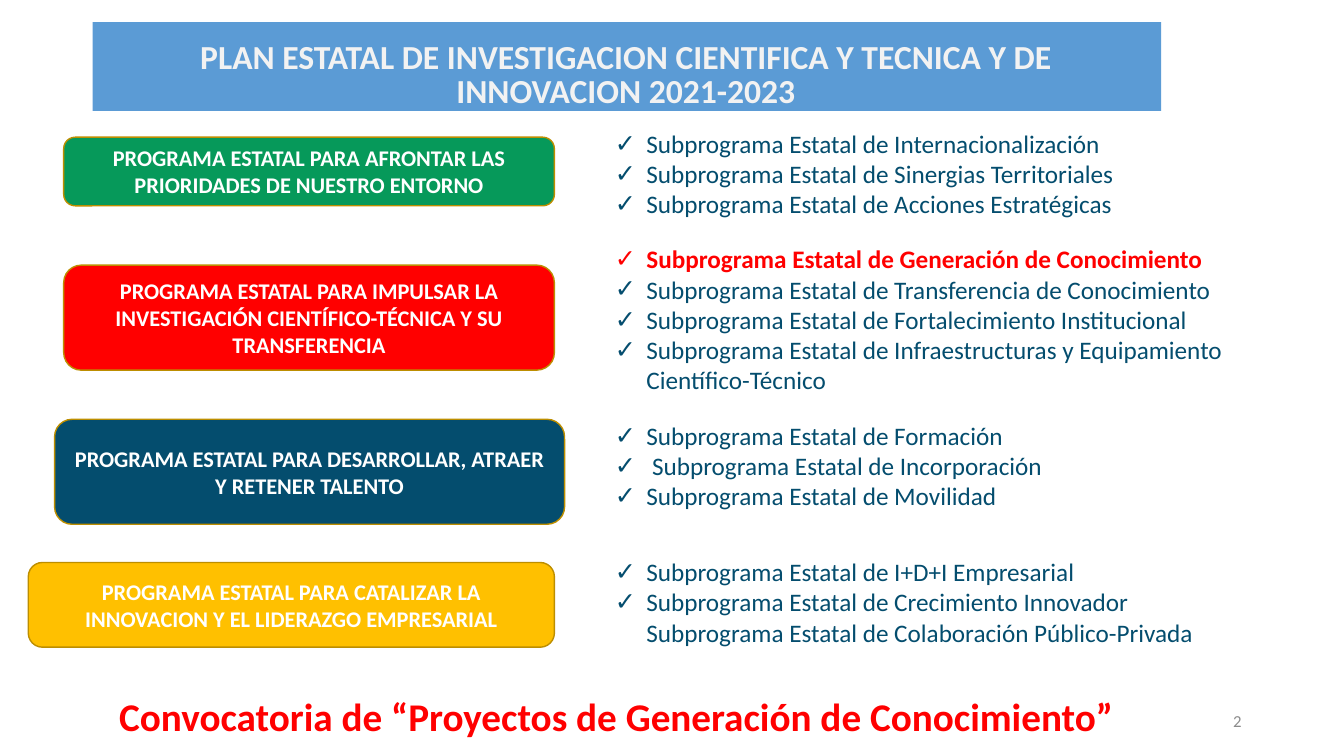
from lxml.etree import SubElement
from pptx import Presentation
from pptx.dml.color import RGBColor
from pptx.enum.shapes import MSO_SHAPE
from pptx.enum.text import MSO_ANCHOR, MSO_AUTO_SIZE, PP_ALIGN
from pptx.oxml.ns import qn
from pptx.util import Pt

WHITE = RGBColor(0xFF, 0xFF, 0xFF)
PALE = RGBColor(0xF2, 0xF2, 0xF2)
GRAY = RGBColor(0x8C, 0x8C, 0x8C)
SKY = RGBColor(0x5B, 0x9B, 0xD5)
GREEN = RGBColor(0x06, 0x99, 0x5A)
RED = RGBColor(0xFF, 0x00, 0x00)
NAVY = RGBColor(0x04, 0x4D, 0x6E)
AMBER = RGBColor(0xFF, 0xC0, 0x00)
GOLD = RGBColor(0xBD, 0x8E, 0x00)

COMPARISON_LAYOUT = 4
LIST_LEFT = 432

# Card text, fill and bounds; list top, width, height and items
PROGRAMMES = [
    ("PROGRAMA ESTATAL PARA AFRONTAR LAS PRIORIDADES DE NUESTRO ENTORNO",
     GREEN, (45.5, 98, 350.5, 49), (88, 480, 72.7),
     ["Subprograma Estatal de Internacionalización",
      "Subprograma Estatal de Sinergias Territoriales",
      "Subprograma Estatal de Acciones Estratégicas"]),
    ("PROGRAMA ESTATAL PARA IMPULSAR LA INVESTIGACIÓN CIENTÍFICO-TÉCNICA "
     "Y SU TRANSFERENCIA",
     RED, (45.5, 189.4, 350.5, 75), (170.5, 510, 116.5),
     ["Subprograma Estatal de Generación de Conocimiento",
      "Subprograma Estatal de Transferencia de Conocimiento",
      "Subprograma Estatal de Fortalecimiento Institucional",
      "Subprograma Estatal de Infraestructuras y Equipamiento "
      "Científico-Técnico"]),
    ("PROGRAMA ESTATAL PARA DESARROLLAR, ATRAER Y RETENER TALENTO",
     NAVY, (39, 299.5, 364.3, 75), (296.6, 480, 72.7),
     ["Subprograma Estatal de Formación",
      " Subprograma Estatal de Incorporación",
      "Subprograma Estatal de Movilidad"]),
    ("PROGRAMA ESTATAL PARA CATALIZAR LA INNOVACION Y EL LIDERAZGO EMPRESARIAL",
     AMBER, (20.2, 401.8, 375.8, 60.5), (393.8, 480, 72.7),
     ["Subprograma Estatal de I+D+I Empresarial",
      "Subprograma Estatal de Crecimiento Innovador\n"
      "Subprograma Estatal de Colaboración Público-Privada"]),
]
HIGHLIGHT = "Subprograma Estatal de Generación de Conocimiento"


class ProgrammeSlide:
    font_name = "Calibri"
    list_indent = Pt(22.5)

    def __init__(self, prs):
        self.slide = prs.slides.add_slide(prs.slide_layouts[COMPARISON_LAYOUT])
        self.shapes = self.slide.shapes

    def place(self, shape, left, top, width, height):
        shape.left, shape.top = Pt(left), Pt(top)
        shape.width, shape.height = Pt(width), Pt(height)

    def add_text(self, paragraph, text, size, color, bold=False):
        """Add text as styled runs, with a line break at each newline."""
        for number, line in enumerate(text.split("\n")):
            if number:
                paragraph.add_line_break()
            run = paragraph.add_run()
            run.text = line
            run.font.name = self.font_name
            run.font.size = Pt(size)
            run.font.bold = bold
            run.font.color.rgb = color

    def shape(self, preset, bounds, fill, outline=None):
        shape = self.shapes.add_shape(preset, *map(Pt, bounds))
        shape.shadow.inherit = False
        shape.fill.solid()
        shape.fill.fore_color.rgb = fill
        if outline is None:
            shape.line.fill.background()
        else:
            shape.line.color.rgb = outline
            shape.line.width = Pt(1)
        return shape

    def band(self, bounds, fill):
        """Draw a plain bar behind everything else."""
        element = self.shape(MSO_SHAPE.RECTANGLE, bounds, fill).element
        element.getparent().insert(2, element)

    def title(self, text, bounds):
        title = self.shapes.title
        self.place(title, *bounds)
        frame = title.text_frame
        frame.auto_size = MSO_AUTO_SIZE.NONE
        frame.vertical_anchor = MSO_ANCHOR.TOP
        heading = frame.paragraphs[0]
        heading.alignment = PP_ALIGN.CENTER
        heading.line_spacing = 0.85
        self.add_text(heading, text, 24, PALE, bold=True)

    def card(self, text, bounds, fill):
        card = self.shape(MSO_SHAPE.ROUNDED_RECTANGLE, bounds, fill, GOLD)
        frame = card.text_frame
        frame.word_wrap = True
        frame.vertical_anchor = MSO_ANCHOR.MIDDLE
        frame.paragraphs[0].alignment = PP_ALIGN.CENTER
        self.add_text(frame.paragraphs[0], text, 16, WHITE, bold=True)

    def checklist(self, slot, items, top, width, height):
        body = self.slide.placeholders[slot]
        self.place(body, LIST_LEFT, top, width, height)
        frame = body.text_frame
        frame.auto_size = MSO_AUTO_SIZE.SHAPE_TO_FIT_TEXT
        frame.vertical_anchor = MSO_ANCHOR.TOP
        for number, item in enumerate(items):
            entry = frame.add_paragraph() if number else frame.paragraphs[0]
            properties = entry._p.get_or_add_pPr()
            properties.set("marL", str(self.list_indent))
            properties.set("indent", str(-self.list_indent))
            SubElement(properties, qn("a:buChar"), char="✓")
            entry.space_before = Pt(0)
            entry.alignment = PP_ALIGN.LEFT
            chosen = item == HIGHLIGHT
            self.add_text(entry, item, 18, RED if chosen else NAVY, bold=chosen)

    def label(self, text, bounds, size, color, alignment, bold=False):
        box = self.shapes.add_textbox(*map(Pt, bounds))
        frame = box.text_frame
        frame.word_wrap = True
        frame.vertical_anchor = MSO_ANCHOR.MIDDLE
        frame.paragraphs[0].alignment = alignment
        self.add_text(frame.paragraphs[0], text, size, color, bold)


def main():
    prs = Presentation()
    prs.slide_width, prs.slide_height = Pt(960), Pt(540)
    plan = ProgrammeSlide(prs)
    plan.band((66.2, 15.8, 763.2, 63.4), SKY)
    plan.title("PLAN ESTATAL DE INVESTIGACION CIENTIFICA Y TECNICA Y DE "
               "INNOVACION 2021-2023", (69.8, 26.6, 754.6, 47.5))
    for slot, programme in enumerate(PROGRAMMES, start=1):
        name, fill, card_bounds, list_bounds, subprogrammes = programme
        plan.card(name, card_bounds, fill)
        plan.checklist(slot, subprogrammes, *list_bounds)
    plan.label("Convocatoria de “Proyectos de Generación de Conocimiento”",
               (45.5, 491, 789, 41), 28, RED, PP_ALIGN.CENTER, bold=True)
    plan.label("2", (678, 500.5, 216, 28.8), 12, GRAY, PP_ALIGN.RIGHT)
    prs.save("out.pptx")


if __name__ == "__main__":
    main()
